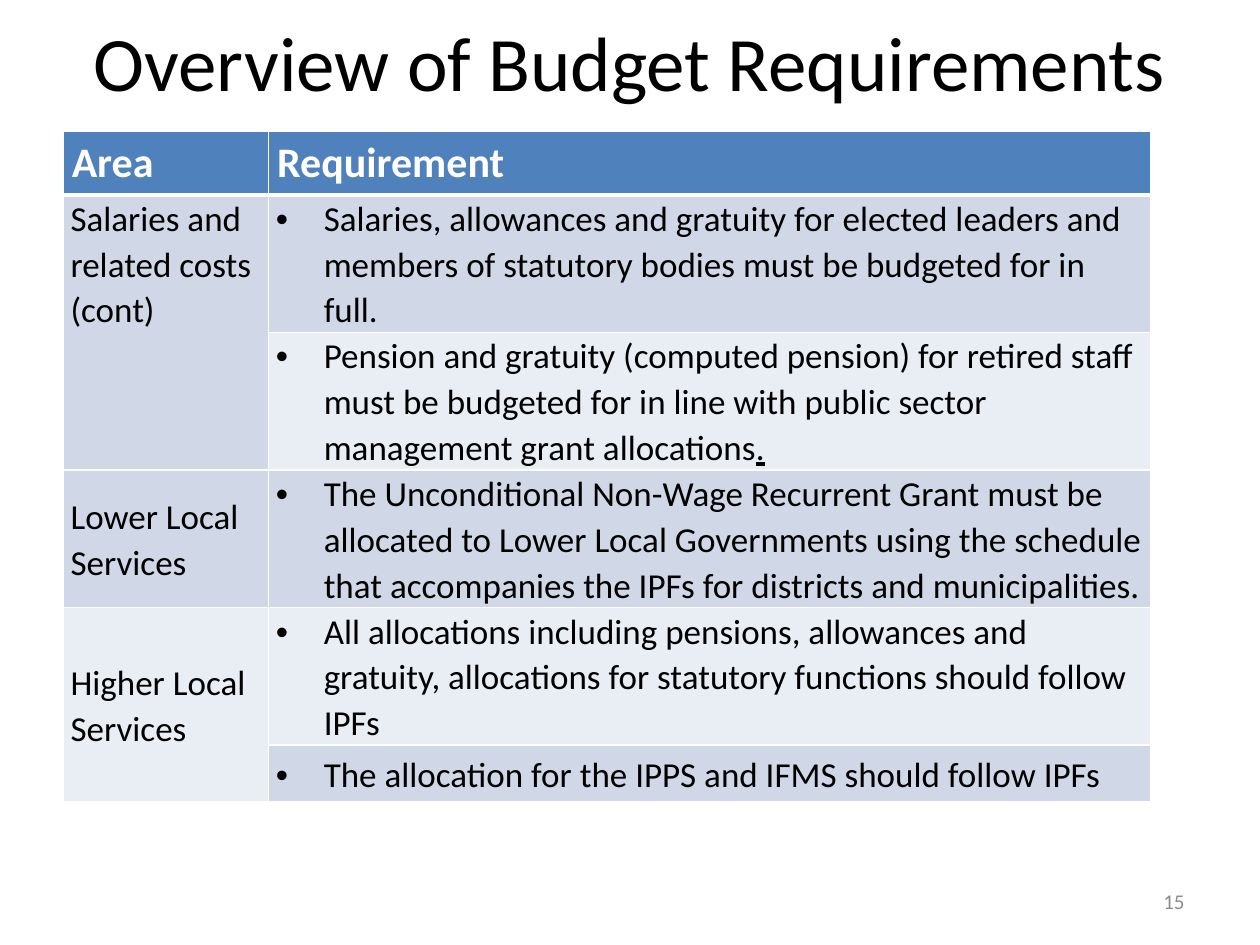
import dataclasses
import typing

import pptx
import pptx.dml.color
import pptx.enum.text
import pptx.oxml
import pptx.oxml.ns
import pptx.util

Inches = pptx.util.Inches
Pt = pptx.util.Pt
Anchor = pptx.enum.text.MSO_ANCHOR
Align = pptx.enum.text.PP_ALIGN

FONT = "Calibri"
COLORS = {
    "header": "4F81BD",
    "dark_band": "D0D8E8",
    "light_band": "E9EDF4",
    "border": "FFFFFF",
    "header_text": "FFFFFF",
    "text": "000000",
    "page_number": "8C8C8C",
}
SLIDE_WIDTH, SLIDE_HEIGHT = 10, 7.5
MARGIN = 0.05 * SLIDE_WIDTH
COLUMN_WIDTHS = [1.63, 7]
HEADER_HEIGHT, THREE_LINES, ONE_LINE = 0.49, 1.09, 0.45
BULLET_INDENT = 0.38


@dataclasses.dataclass
class Entry:
    """One table cell, placed by row and column."""
    row: int
    column: int
    text: str
    band: str = "dark_band"
    anchor: typing.Any = Anchor.MIDDLE
    row_span: int = 1
    underlined_end: str = ""


HEADINGS = [
    Entry(0, 0, "Area", "header", Anchor.TOP),
    Entry(0, 1, "Requirement", "header", Anchor.TOP),
]
AREAS = [
    Entry(1, 0, "Salaries and related costs (cont)", anchor=Anchor.TOP, row_span=2),
    Entry(3, 0, "Lower Local Services"),
    Entry(4, 0, "Higher Local Services", "light_band", row_span=2),
]
REQUIREMENTS = [
    Entry(1, 1, "Salaries, allowances and gratuity for elected leaders and members of "
          "statutory bodies must be budgeted for in full.", anchor=Anchor.TOP),
    Entry(2, 1, "Pension and gratuity (computed pension) for retired staff must be budgeted "
          "for in line with public sector management grant allocations",
          "light_band", Anchor.TOP, underlined_end="."),
    Entry(3, 1, "The Unconditional Non-Wage Recurrent Grant must be allocated to Lower Local "
          "Governments using the schedule that accompanies the IPFs for districts and "
          "municipalities."),
    Entry(4, 1, "All allocations including pensions, allowances and gratuity, allocations "
          "for statutory functions should follow IPFs", "light_band"),
    Entry(5, 1, "The allocation for the IPPS and IFMS should follow IPFs"),
]


def rgb(name: str) -> pptx.dml.color.RGBColor:
    return pptx.dml.color.RGBColor.from_string(COLORS[name])


def style_runs(paragraph, size: float, color: str, bold: bool = False) -> None:
    for run in paragraph.runs:
        run.font.name = FONT
        run.font.size = Pt(size)
        run.font.bold = bold
        run.font.color.rgb = rgb(color)


def add_borders(cell, bottom_width: float) -> None:
    properties = cell._tc.get_or_add_tcPr()
    for side, width in (("L", 1), ("R", 1), ("T", 1), ("B", bottom_width)):
        properties.append(pptx.oxml.parse_xml(
            f'<a:ln{side} {pptx.oxml.ns.nsdecls("a")} w="{Pt(width)}"><a:solidFill>'
            f'<a:srgbClr val="{COLORS["border"]}"/></a:solidFill></a:ln{side}>'))


def add_bullet(paragraph) -> None:
    properties = paragraph._p.get_or_add_pPr()
    properties.set("marL", str(Inches(BULLET_INDENT)))
    properties.set("indent", str(-Inches(BULLET_INDENT)))
    for tag in ('buFont {} typeface="Arial"', 'buChar {} char="•"'):
        properties.append(pptx.oxml.parse_xml(
            f'<a:{tag.format(pptx.oxml.ns.nsdecls("a"))}/>'))


def fill_entry(table, entry: Entry) -> None:
    cell = table.cell(entry.row, entry.column)
    is_heading = entry.row == 0
    if entry.row_span > 1:
        cell.merge(table.cell(entry.row + entry.row_span - 1, entry.column))
    for row in range(entry.row, entry.row + entry.row_span):
        covered = table.cell(row, entry.column)
        add_borders(covered, 3 if is_heading else 1)
        covered.fill.solid()
        covered.fill.fore_color.rgb = rgb(entry.band)

    cell.vertical_anchor = entry.anchor
    cell.margin_left = cell.margin_right = Inches(0.07 if is_heading else 0.06)
    cell.margin_top = cell.margin_bottom = Inches(0.05 if is_heading else 0)
    cell.text_frame.text = entry.text
    paragraph = cell.text_frame.paragraphs[0]
    if entry.underlined_end:
        ending = paragraph.add_run()
        ending.text = entry.underlined_end
        ending.font.underline = True
    if is_heading:
        style_runs(paragraph, 24, "header_text", bold=True)
        return
    style_runs(paragraph, 20, "text")
    paragraph.line_spacing = 1.07
    if entry.column == 1:
        add_bullet(paragraph)


def add_title(slide) -> None:
    title = slide.shapes.title
    title.left, title.top = Inches(MARGIN), Inches(-0.02)
    title.width, title.height = Inches(SLIDE_WIDTH - 2 * MARGIN), Inches(1)
    title.text_frame.text = "Overview of Budget Requirements"
    title.text_frame.vertical_anchor = Anchor.MIDDLE
    heading = title.text_frame.paragraphs[0]
    heading.alignment = Align.CENTER
    style_runs(heading, 44, "text")


def add_requirements_table(slide) -> None:
    row_heights = [HEADER_HEIGHT] + [THREE_LINES] * 4 + [ONE_LINE]
    table = slide.shapes.add_table(
        len(row_heights), len(COLUMN_WIDTHS), Inches(MARGIN), Inches(1.04),
        Inches(sum(COLUMN_WIDTHS)), Inches(sum(row_heights))).table
    for column, width in zip(table.columns, COLUMN_WIDTHS):
        column.width = Inches(width)
    for row, height in zip(table.rows, row_heights):
        row.height = Inches(height)
    for entry in HEADINGS + AREAS + REQUIREMENTS:
        fill_entry(table, entry)


def add_page_number(slide) -> None:
    width = 2.33
    frame = slide.shapes.add_textbox(
        Inches(SLIDE_WIDTH - MARGIN - width), Inches(6.95),
        Inches(width), Inches(0.4)).text_frame
    frame.word_wrap = True
    frame.vertical_anchor = Anchor.MIDDLE
    frame.text = "15"
    number = frame.paragraphs[0]
    number.alignment = Align.RIGHT
    style_runs(number, 12, "page_number")


def main() -> None:
    presentation = pptx.Presentation()
    presentation.slide_width = Inches(SLIDE_WIDTH)
    presentation.slide_height = Inches(SLIDE_HEIGHT)
    title_only = presentation.slide_layouts[5]
    slide = presentation.slides.add_slide(title_only)
    add_title(slide)
    add_requirements_table(slide)
    add_page_number(slide)
    presentation.save("out.pptx")


if __name__ == "__main__":
    main()
